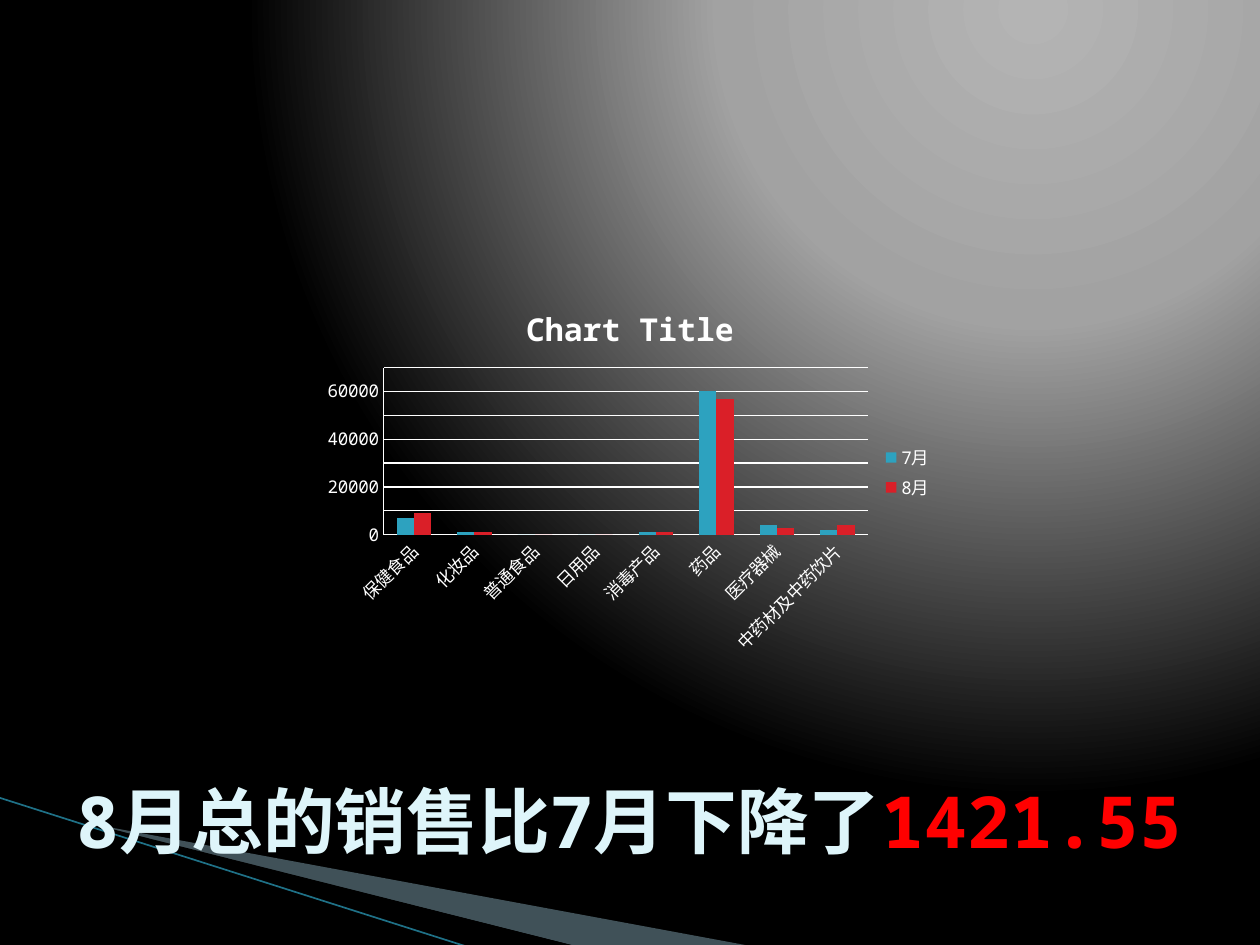
from pptx import Presentation
from pptx.chart.data import CategoryChartData
from pptx.dml.color import RGBColor
from pptx.enum.chart import XL_CHART_TYPE, XL_LEGEND_POSITION, XL_TICK_MARK
from pptx.enum.shapes import MSO_CONNECTOR
from pptx.enum.text import MSO_ANCHOR
from pptx.oxml import parse_xml
from pptx.oxml.ns import nsdecls
from pptx.util import Pt
from lxml.etree import SubElement

FONT = "Noto Sans Mono"
COLORS = {
    "glow": "B4B4B4", "mid": "A2A2A2", "black": "000000",
    "swoosh": "A0CBDC", "streak": "1F7187",
    "title": "DEF5FA", "alert": "FF0000", "white": "FFFFFF",
    "july": "2DA2BF", "august": "DA1F28",
}
CATEGORIES = ["保健食品", "化妆品", "普通食品", "日用品",
              "消毒产品", "药品", "医疗器械", "中药材及中药饮片"]
SERIES = [
    ("7月", "july", [7000, 1000, 0, 0, 1000, 60000, 4000, 2000]),
    ("8月", "august", [9000, 1000, 0, 0, 1000, 57000, 3000, 4000]),
]


def rgb(name):
    return RGBColor.from_string(COLORS[name])


def set_attrs(obj, values):
    for key, value in values.items():
        setattr(obj, key, value)


def set_font(font, size, color, bold=False):
    set_attrs(font, {"name": FONT, "size": Pt(size), "bold": bold})
    font.color.rgb = rgb(color)


def set_background(s):
    stops = "".join(
        f'<a:gs pos="{pos * 1000}"><a:srgbClr val="{COLORS[name]}"/></a:gs>'
        for pos, name in [(0, "glow"), (40, "mid"), (100, "black")])
    s.background.fill.solid()
    solid = s.element.xpath(".//p:bgPr/a:solidFill")[0]
    solid.getparent().replace(solid, parse_xml(
        f'<a:gradFill {nsdecls("a")} rotWithShape="1"><a:gsLst>{stops}</a:gsLst>'
        '<a:path path="circle"><a:fillToRect l="65000" b="98000"/></a:path>'
        '</a:gradFill>'))


def add_wedge(s, points, color, alpha=None):
    corners = [(Pt(x), Pt(y)) for x, y in points]
    builder = s.shapes.build_freeform(*corners[0])
    builder.add_line_segments(corners[1:], close=True)
    sp = builder.convert_to_shape()
    sp.shadow.inherit = False
    sp.fill.solid()
    sp.fill.fore_color.rgb = rgb(color)
    sp.line.fill.background()
    if alpha is not None:
        clr = sp.element.xpath("./p:spPr/a:solidFill/a:srgbClr")[0]
        clr.append(parse_xml(f'<a:alpha {nsdecls("a")} val="{alpha * 1000}"/>'))


def add_streak(s, start, end, color, width):
    line = s.shapes.add_connector(
        MSO_CONNECTOR.STRAIGHT, *[Pt(v) for v in (*start, *end)])
    line.line.color.rgb = rgb(color)
    line.line.width = Pt(width)
    sp_pr = line.element.spPr
    SubElement(sp_pr, sp_pr.xpath("./a:ln")[0].tag.replace("}ln", "}effectLst"))


def add_title(s, box, parts, size):
    tf = s.shapes.add_textbox(*[Pt(v) for v in box]).text_frame
    set_attrs(tf, {"word_wrap": True, "vertical_anchor": MSO_ANCHOR.MIDDLE})
    p = tf.paragraphs[0]
    for text, color in parts:
        r = p.add_run()
        r.text = text
        set_font(r.font, size, color, bold=True)


def style_axis(axis):
    set_attrs(axis, {"major_tick_mark": XL_TICK_MARK.NONE,
                     "minor_tick_mark": XL_TICK_MARK.NONE})
    axis.format.line.color.rgb = rgb("white")
    set_font(axis.tick_labels.font, 10, "white")


def add_sales_chart(s, box):
    data = CategoryChartData()
    data.categories = CATEGORIES
    for name, _, values in SERIES:
        data.add_series(name, values)
    chart = s.shapes.add_chart(
        XL_CHART_TYPE.COLUMN_CLUSTERED, *[Pt(v) for v in box], data).chart
    set_font(chart.font, 10, "white")

    # Title and legend
    set_attrs(chart, {"has_title": True, "has_legend": True})
    tf = chart.chart_title.text_frame
    tf.text = "Chart Title"
    set_font(tf.paragraphs[0].runs[0].font, 18, "white", bold=True)
    set_attrs(chart.legend, {"position": XL_LEGEND_POSITION.RIGHT,
                             "include_in_layout": False})
    set_font(chart.legend.font, 10, "white")

    # Axes
    style_axis(chart.category_axis)
    axis = chart.value_axis
    style_axis(axis)
    set_attrs(axis, {"minimum_scale": 0, "maximum_scale": 70000,
                     "major_unit": 10000, "has_major_gridlines": True})
    axis.major_gridlines.format.line.color.rgb = rgb("white")

    # Columns
    plot = chart.plots[0]
    set_attrs(plot, {"gap_width": 150, "overlap": 0, "vary_by_categories": False})
    for series, (_, color, _) in zip(plot.series, SERIES):
        series.format.fill.solid()
        series.format.fill.fore_color.rgb = rgb(color)


def main():
    prs = Presentation()
    set_attrs(prs, {"slide_width": Pt(720), "slide_height": Pt(540)})
    s = prs.slides.add_slide(prs.slide_layouts[6])

    # Backdrop with the corner swoosh
    set_background(s)
    add_wedge(s, [(39.6, 468.5), (428.5, 540.5), (328.5, 540.5), (39.6, 468)],
              "swoosh", alpha=40)
    add_wedge(s, [(38.2, 467.3), (329, 540.7), (268, 541), (39, 468)], "black")
    add_streak(s, (-0.5, 455.8), (267, 541), "streak", 0.95)

    # Headline and chart
    add_title(s, (36.7, 423.4, 648, 90),
              [("8月总的销售比7月下降了", "title"), ("1421.55", "alert")], 41)
    add_sales_chart(s, (180, 162, 360, 216))

    prs.save("out.pptx")


if __name__ == "__main__":
    main()
